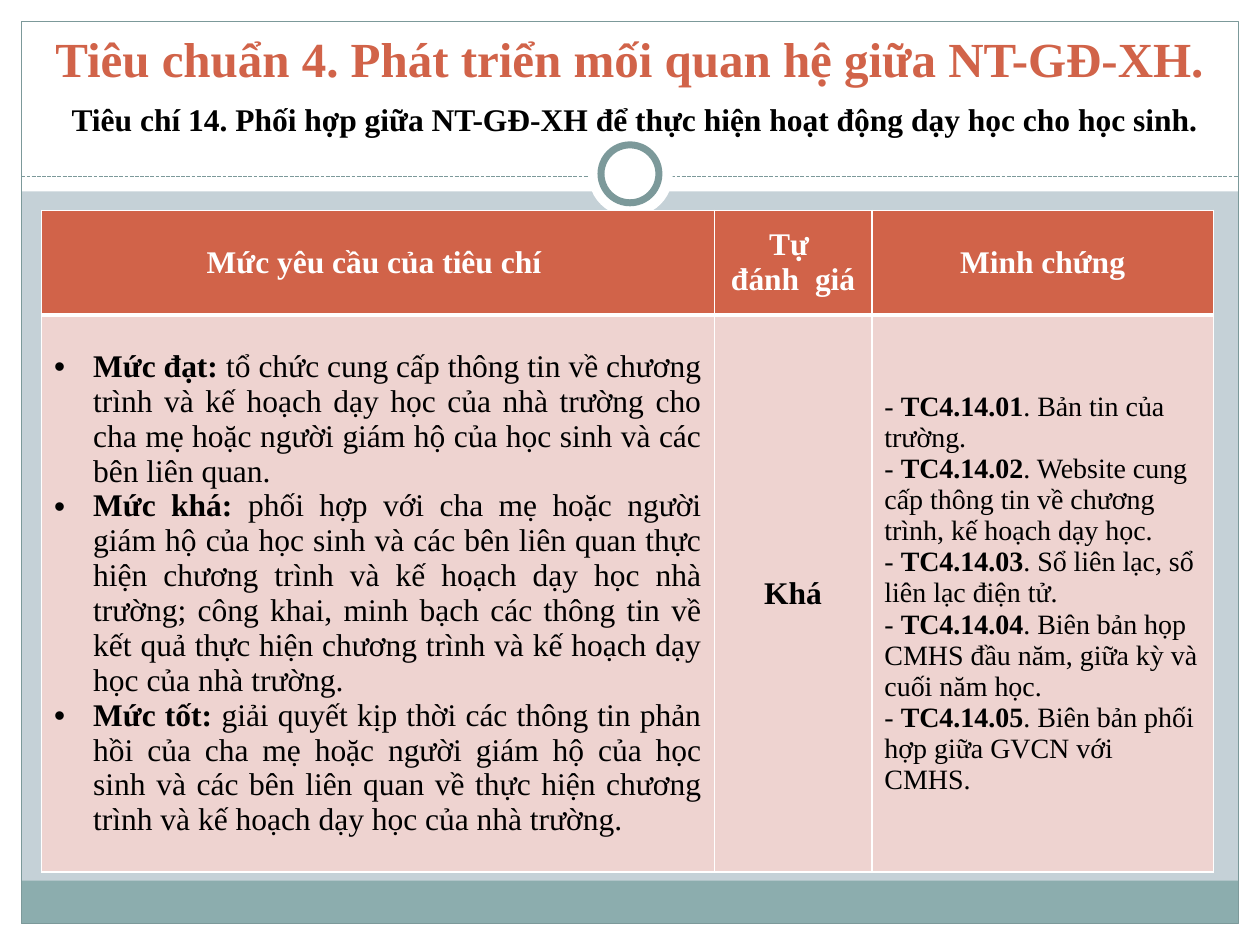
from lxml import etree
from pptx import Presentation
from pptx.dml.color import RGBColor
from pptx.enum import dml, shapes, text
from pptx.oxml import ns
from pptx.util import Inches, Pt

WHITE = RGBColor(0xFF, 0xFF, 0xFF)
BLACK = RGBColor(0, 0, 0)
BACKGROUND = RGBColor(0xC5, 0xD1, 0xD7)
TEAL = RGBColor(0x7C, 0x99, 0x9A)
FOOTER = RGBColor(0x8C, 0xAD, 0xAE)
ORANGE = RGBColor(0xD1, 0x63, 0x49)
PINK = RGBColor(0xEE, 0xD3, 0xD0)

FONT = "Times New Roman"
WIDTH, HEIGHT, MARGIN = 10, 7.5, 0.17
CENTER = text.PP_ALIGN.CENTER
JUSTIFY = text.PP_ALIGN.JUSTIFY
LEFT = text.PP_ALIGN.LEFT
RECTANGLE = shapes.MSO_SHAPE.RECTANGLE
OVAL = shapes.MSO_SHAPE.OVAL

HEADING = "Tiêu chuẩn 4. Phát triển mối quan hệ giữa NT-GĐ-XH."
CRITERION = "Tiêu chí 14. Phối hợp giữa NT-GĐ-XH để thực hiện hoạt động dạy học cho học sinh."

HEADERS = [["Mức yêu cầu của tiêu chí "], ["Tự ", "đánh  giá"], ["Minh chứng"]]
LEVELS = [
    ("Mức đạt: ", "tổ chức cung cấp thông tin về chương trình và kế hoạch dạy học của nhà trường "
     "cho cha mẹ hoặc người giám hộ của học sinh và các bên liên quan."),
    ("Mức khá: ", "phối hợp với cha mẹ hoặc người giám hộ của học sinh và các bên liên quan thực "
     "hiện chương trình và kế hoạch dạy học nhà trường; công khai, minh bạch các thông tin về "
     "kết quả thực hiện chương trình và kế hoạch dạy học của nhà trường."),
    ("Mức tốt: ", "giải quyết kịp thời các thông tin phản hồi của cha mẹ hoặc người giám hộ của "
     "học sinh và các bên liên quan về thực hiện chương trình và kế hoạch dạy học của nhà trường."),
]
RATING = "Khá"
EVIDENCE = [
    ("TC4.14.01", ". Bản tin của trường."),
    ("TC4.14.02", ". Website cung cấp thông tin về chương trình, kế hoạch dạy học."),
    ("TC4.14.03", ". Sổ liên lạc, sổ liên lạc điện tử."),
    ("TC4.14.04", ". Biên bản họp CMHS đầu năm, giữa kỳ và cuối năm học."),
    ("TC4.14.05", ". Biên bản phối hợp giữa GVCN với CMHS."),
]

COLUMNS = [5.34, 1.25, 2.71]
ROWS = [0.83, 4.42]

DECORATION = [
    (RECTANGLE, (0, HEIGHT - MARGIN, WIDTH, MARGIN), WHITE, None),
    (RECTANGLE, (0, 0, WIDTH, 1.52), WHITE, None),
    (RECTANGLE, (0, 0, MARGIN, HEIGHT), WHITE, None),
    (RECTANGLE, (WIDTH - MARGIN, 0, MARGIN, HEIGHT), WHITE, None),
    (RECTANGLE, (MARGIN, 6.99, WIDTH - 2 * MARGIN, 0.34), FOOTER, None),
    (RECTANGLE, (MARGIN, MARGIN, WIDTH - 2 * MARGIN, HEIGHT - 2 * MARGIN), None, 0.75),
]
RING = [
    (OVAL, (4.67, 1.05, 0.67, 0.67), WHITE, None),
    (OVAL, (4.77, 1.15, 0.46, 0.46), WHITE, 4),
]


def add_decoration(slide, items):
    for kind, box, fill, line_width in items:
        shape = slide.shapes.add_shape(kind, *map(Inches, box))
        shape.shadow.inherit = False
        if fill is None:
            shape.fill.background()
        else:
            shape.fill.solid()
            shape.fill.fore_color.rgb = fill
        if line_width is None:
            shape.line.fill.background()
        else:
            shape.line.color.rgb = TEAL
            shape.line.width = Pt(line_width)


def add_divider(slide):
    ends = (MARGIN, 1.4, WIDTH - MARGIN, 1.4)
    line = slide.shapes.add_connector(shapes.MSO_CONNECTOR.STRAIGHT, *map(Inches, ends))
    line.line.color.rgb = TEAL
    line.line.width = Pt(0.75)
    line.line.dash_style = dml.MSO_LINE.SQUARE_DOT
    etree.SubElement(line._element.spPr, ns.qn("a:effectLst"))


def add_run(paragraph, words, size=18, bold=True, color=BLACK):
    run = paragraph.add_run()
    run.text = words
    for name, value in {"name": FONT, "size": Pt(size), "bold": bold}.items():
        setattr(run.font, name, value)
    run.font.color.rgb = color


def add_title(slide):
    box = slide.shapes.add_textbox(*map(Inches, (0.33, 0.08, 9.33, 1.08)))
    frame = box.text_frame
    for name, value in {"word_wrap": True, "vertical_anchor": text.MSO_ANCHOR.BOTTOM}.items():
        setattr(frame, name, value)
    paragraph = frame.paragraphs[0]
    paragraph.alignment = CENTER
    add_run(paragraph, HEADING, 28, color=ORANGE)
    paragraph.add_line_break()
    add_run(paragraph, " ", 25)
    add_run(paragraph, CRITERION)


def add_bullet(paragraph):
    properties = paragraph._p.get_or_add_pPr()
    properties.set("marL", str(Inches(0.31)))
    properties.set("indent", str(-Inches(0.31)))
    etree.SubElement(properties, ns.qn("a:buFont"), typeface="Arial")
    etree.SubElement(properties, ns.qn("a:buChar"), char="•")


def add_borders(cell, widths):
    properties = cell._tc.get_or_add_tcPr()
    for position, (side, width) in enumerate(widths.items()):
        border = etree.Element(ns.qn(f"a:ln{side}"), w=str(Pt(width)))
        fill = etree.SubElement(border, ns.qn("a:solidFill"))
        etree.SubElement(fill, ns.qn("a:srgbClr"), val=str(WHITE))
        properties.insert(position, border)


def fill_cell(cell, paragraphs, alignment, fill, borders, bullets=False):
    cell.vertical_anchor = text.MSO_ANCHOR.MIDDLE
    cell.fill.solid()
    cell.fill.fore_color.rgb = fill
    add_borders(cell, borders)
    frame = cell.text_frame
    for index, runs in enumerate(paragraphs):
        paragraph = frame.add_paragraph() if index else frame.paragraphs[0]
        paragraph.alignment = alignment
        if bullets:
            add_bullet(paragraph)
        for run in runs:
            add_run(paragraph, *run)


def add_criteria_table(slide):
    box = (0.33, 1.67, sum(COLUMNS), sum(ROWS))
    table = slide.shapes.add_table(len(ROWS), len(COLUMNS), *map(Inches, box)).table
    for column, width in zip(table.columns, COLUMNS):
        column.width = Inches(width)
    for row, height in zip(table.rows, ROWS):
        row.height = Inches(height)

    header_borders = {"L": 1, "R": 1, "T": 1, "B": 3}
    body_borders = {"L": 1, "R": 1, "T": 3, "B": 1}
    for column, lines in enumerate(HEADERS):
        paragraphs = [[(line, 18, True, WHITE)] for line in lines]
        fill_cell(table.cell(0, column), paragraphs, CENTER, ORANGE, header_borders)

    levels = [[(name,), (words, 18, False)] for name, words in LEVELS]
    evidence = [[("- ", 16, False), (code, 16), (words, 16, False)] for code, words in EVIDENCE]
    body = [(levels, JUSTIFY, True), ([[(RATING,)]], CENTER, False), (evidence, LEFT, False)]
    for column, (paragraphs, alignment, bullets) in enumerate(body):
        fill_cell(table.cell(1, column), paragraphs, alignment, PINK, body_borders, bullets)


def main():
    presentation = Presentation()
    presentation.slide_width = Inches(WIDTH)
    presentation.slide_height = Inches(HEIGHT)
    slide = presentation.slides.add_slide(presentation.slide_layouts[6])
    slide.background.fill.solid()
    slide.background.fill.fore_color.rgb = BACKGROUND
    add_decoration(slide, DECORATION)
    add_divider(slide)
    add_decoration(slide, RING)
    add_title(slide)
    add_criteria_table(slide)
    presentation.save("out.pptx")


if __name__ == "__main__":
    main()
